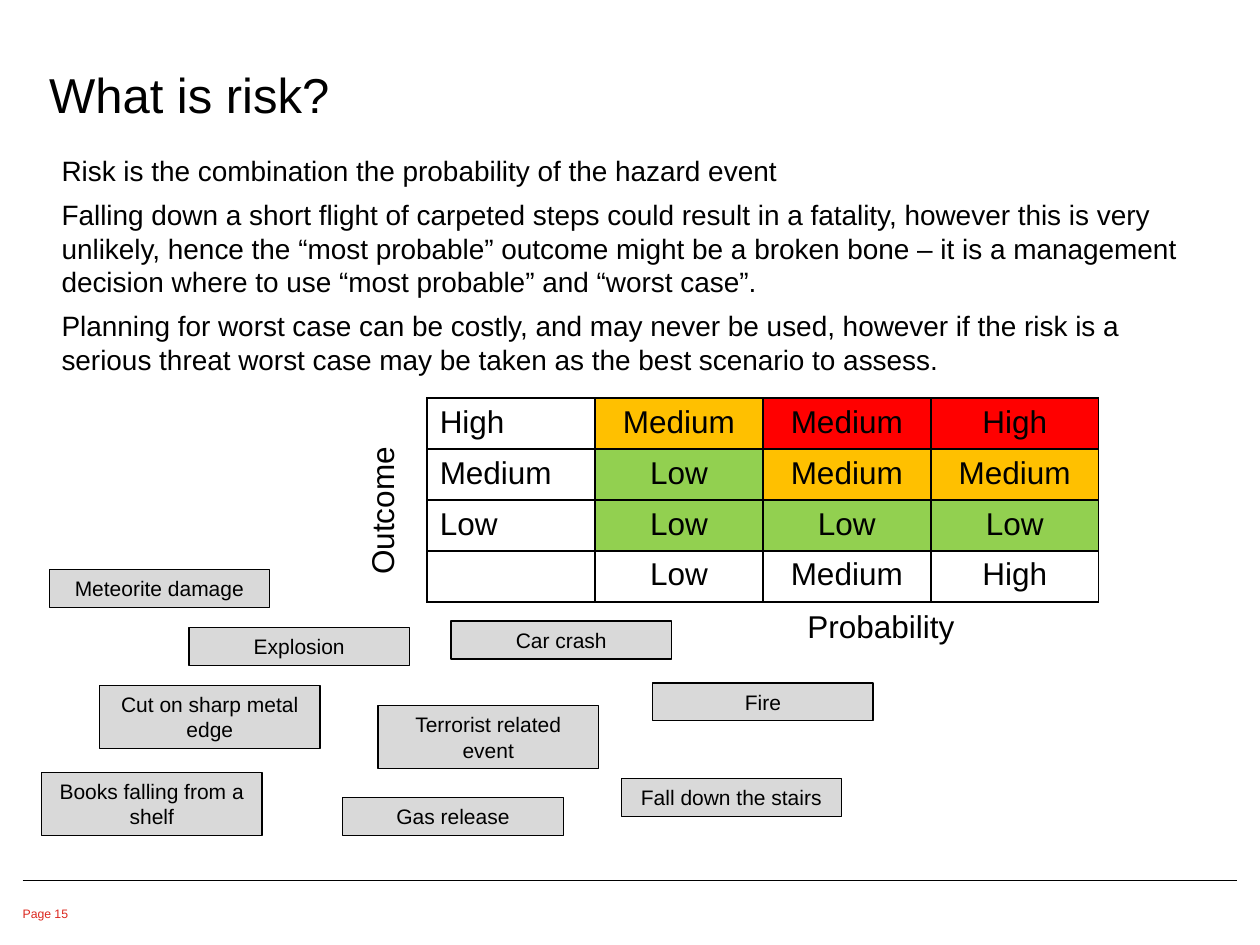
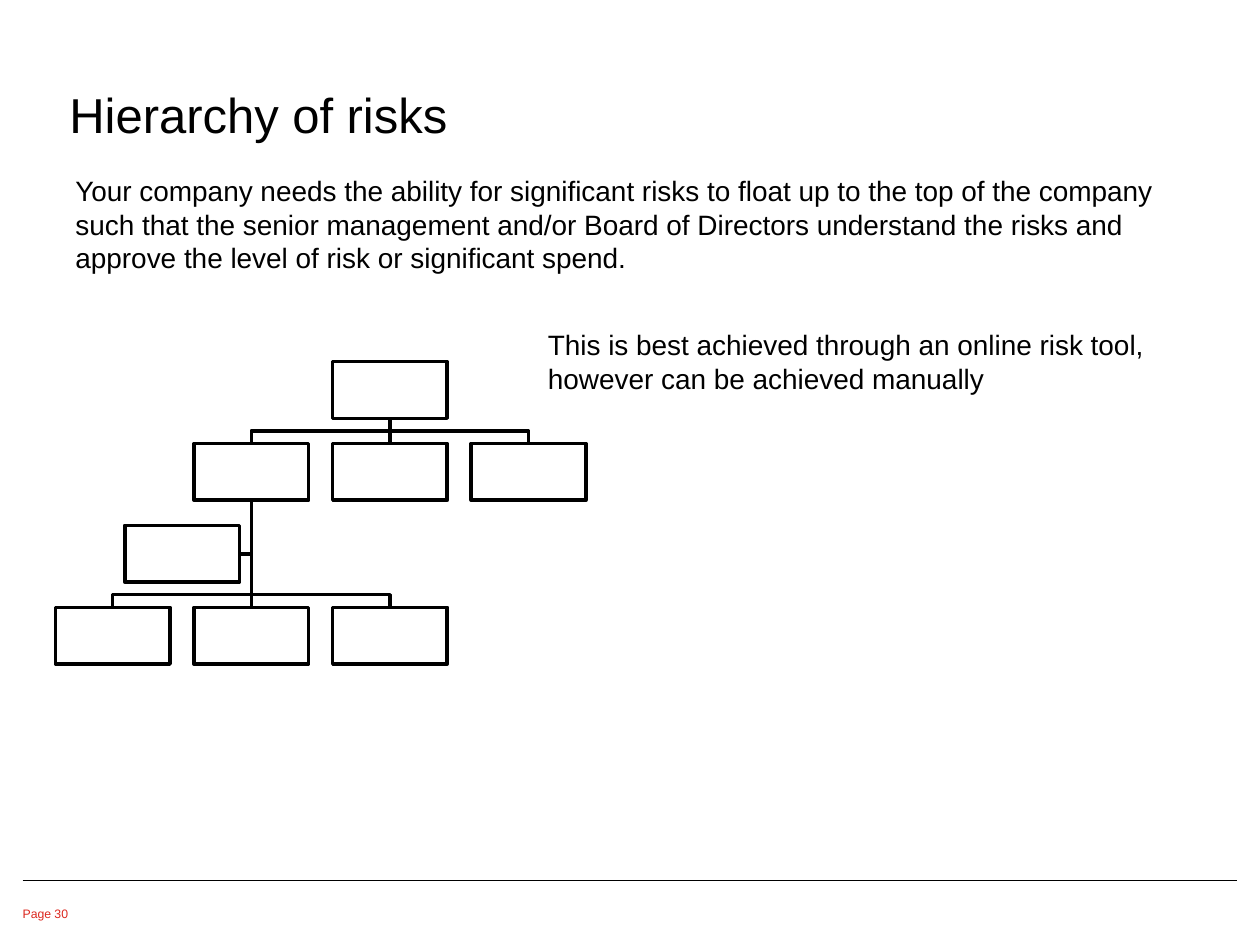
from dataclasses import dataclass
from typing import Optional

from lxml import etree
from pptx import Presentation
from pptx import util as u
from pptx.dml.color import RGBColor
from pptx.enum import shapes, text
from pptx.oxml import ns

Inches, Pt = u.Inches, u.Pt
FONT = "Arial"
COLORS = {
    "black": "000000", "white": "FFFFFF", "footer": "DC271E", "hazard": "D9D9D9",
    "low": "92D050", "medium": "FFC000", "high": "FF0000",
}


@dataclass
class Hazard:
    label: str
    left: float
    top: float
    lines: int = 1


@dataclass
class Node:
    column: float
    row: int
    parent: Optional[int] = None
    assistant: bool = False

    @property
    def left(self) -> float:
        return 0.44 + 1.1 * self.column

    @property
    def top(self) -> float:
        return 2.87 + 0.65 * self.row

    @property
    def center(self) -> float:
        return self.left + NODE_WIDTH / 2

    @property
    def bottom(self) -> float:
        return self.top + NODE_HEIGHT


NODE_WIDTH, NODE_HEIGHT = 0.91, 0.45

# Matrix rows: outcome label, then (rating, colour) by rising probability
MATRIX = [
    ("High", [("Medium", "medium"), ("Medium", "high"), ("High", "high")]),
    ("Medium", [("Low", "low"), ("Medium", "medium"), ("Medium", "medium")]),
    ("Low", [("Low", "low"), ("Low", "low"), ("Low", "low")]),
    ("", [("Low", "white"), ("Medium", "white"), ("High", "white")]),
]

HAZARDS = [
    Hazard("Meteorite damage", 0.39, 4.52),
    Hazard("Cut on sharp metal edge", 0.79, 5.44, 2),
    Hazard("Books falling from a shelf", 0.33, 6.13, 2),
    Hazard("Terrorist related event", 3, 5.6, 2),
    Hazard("Explosion", 1.5, 4.98),
    Hazard("Car crash", 3.58, 4.93),
    Hazard("Fire", 5.18, 5.42),
    Hazard("Gas release", 2.72, 6.33),
    Hazard("Fall down the stairs", 4.93, 6.18),
]

NODES = [
    Node(2, 0),
    Node(1, 1, 0), Node(2, 1, 0), Node(3, 1, 0),
    Node(0.5, 2, 1, assistant=True),
    Node(0, 3, 1), Node(1, 3, 1), Node(2, 3, 1),
]


def rgb(name: str) -> RGBColor:
    return RGBColor.from_string(COLORS[name])


def write(frame, lines, size, color="black", align=text.PP_ALIGN.LEFT, before=0) -> None:
    frame.word_wrap = True
    for index, line in enumerate(lines):
        para = frame.paragraphs[0] if index == 0 else frame.add_paragraph()
        para.alignment = align
        para.space_before = Pt(before)
        span = para.add_run()
        span.text = line
        span.font.size = Pt(size)
        span.font.name = FONT
        span.font.color.rgb = rgb(color)


def clear_margins(frame) -> None:
    frame.margin_left = frame.margin_right = frame.margin_top = frame.margin_bottom = 0


def add_text(page, left, top, width, height, lines, size, **style):
    box = page.shapes.add_textbox(Inches(left), Inches(top), Inches(width), Inches(height))
    write(box.text_frame, lines, size, **style)
    return box


def add_box(page, left, top, width, height, fill, weight):
    box = page.shapes.add_shape(shapes.MSO_SHAPE.RECTANGLE, Inches(left), Inches(top),
                                Inches(width), Inches(height))
    box.shadow.inherit = False
    box.fill.solid()
    box.fill.fore_color.rgb = rgb(fill)
    box.line.color.rgb = rgb("black")
    box.line.width = Pt(weight)
    return box


def add_route(page, points) -> None:
    corners = [(Inches(x), Inches(y)) for x, y in points]
    builder = page.shapes.build_freeform(*corners[0])
    builder.add_line_segments(corners[1:], close=False)
    route = builder.convert_to_shape()
    route.shadow.inherit = False
    route.fill.background()
    route.line.color.rgb = rgb("black")
    route.line.width = Pt(2)


def add_page(deck, title, left, top, number):
    page = deck.slides.add_slide(deck.slide_layouts[5])

    # Title
    heading = page.shapes.title
    heading.left, heading.top = Inches(left), Inches(top)
    heading.width, heading.height = Inches(9.36), Inches(1.06)
    frame = heading.text_frame
    clear_margins(frame)
    frame.auto_size = text.MSO_AUTO_SIZE.NONE
    frame.vertical_anchor = text.MSO_ANCHOR.BOTTOM
    write(frame, [title], 28)

    # Footer rule and page number
    rule = page.shapes.add_connector(shapes.MSO_CONNECTOR.STRAIGHT, Inches(0.18),
                                     Inches(6.99), Inches(9.82), Inches(6.99))
    rule.line.color.rgb = rgb("black")
    rule.line.width = Pt(0.75)
    etree.SubElement(rule._element.spPr, ns.qn("a:effectLst"))
    footer = add_text(page, 0.18, 7.19, 0.41, 0.15, [f"Page {number}"], 7, color="footer")
    clear_margins(footer.text_frame)
    footer.text_frame.word_wrap = False
    return page


def set_borders(cell) -> None:
    properties = cell._tc.get_or_add_tcPr()
    for index, side in enumerate(("lnL", "lnR", "lnT", "lnB")):
        border = etree.Element(ns.qn(f"a:{side}"), w=str(Pt(1)))
        fill = etree.SubElement(border, ns.qn("a:solidFill"))
        etree.SubElement(fill, ns.qn("a:srgbClr"), val=COLORS["black"])
        properties.insert(index, border)


def add_matrix(page) -> None:
    table = page.shapes.add_table(4, 4, Inches(3.39), Inches(3.16),
                                  Inches(5.33), Inches(1.62)).table
    for r, (outcome, ratings) in enumerate(MATRIX):
        for c, (label, color) in enumerate([(outcome, "white"), *ratings]):
            cell = table.cell(r, c)
            cell.fill.solid()
            cell.fill.fore_color.rgb = rgb(color)
            set_borders(cell)
            if label:
                align = text.PP_ALIGN.CENTER if c else text.PP_ALIGN.LEFT
                write(cell.text_frame, [label], 18, align=align)


def risk_page(deck) -> None:
    page = add_page(deck, "What is risk?", 0.39, -0.08, 15)
    add_text(page, 0.39, 1.17, 9.1, 1.88, [
        "Risk is the combination the probability of the hazard event",
        "Falling down a short flight of carpeted steps could result in a fatality, however "
        "this is very unlikely, hence the “most probable” outcome might be a broken bone – "
        "it is a management decision where to use “most probable” and “worst case”.",
        "Planning for worst case can be costly, and may never be used, however if the risk "
        "is a serious threat worst case may be taken as the best scenario to assess.",
    ], 16, before=6)

    # Risk matrix and axis names
    add_matrix(page)
    outcome = add_text(page, 2.83, 3.24, 0.5, 1.42, ["Outcome"], 18)
    outcome.text_frame._txBody.bodyPr.set("vert", "vert270")
    add_text(page, 6.31, 4.77, 3.17, 0.4, ["Probability"], 18)

    # Hazards to place in the matrix
    for hazard in HAZARDS:
        box = add_box(page, hazard.left, hazard.top, 1.75, 0.1 + 0.2 * hazard.lines,
                      "hazard", 0.75)
        write(box.text_frame, [hazard.label], 12, align=text.PP_ALIGN.CENTER)


def hierarchy_page(deck) -> None:
    page = add_page(deck, "Hierarchy of risks", 0.55, 0.08, 30)
    add_text(page, 0.5, 1.33, 8.92, 0.95, [
        "Your company needs the ability for significant risks to float up to the top of the "
        "company such that the senior management and/or Board of Directors understand the "
        "risks and approve the level of risk or significant spend.",
    ], 16, before=6)

    # Routes from each parent, then the boxes
    for node in NODES:
        if node.parent is None:
            continue
        parent = NODES[node.parent]
        start = (parent.center, parent.bottom)
        if node.assistant:
            middle = node.top + NODE_HEIGHT / 2
            points = [start, (parent.center, middle), (node.left + NODE_WIDTH, middle)]
        elif node.column == parent.column:
            points = [start, (node.center, node.top)]
        else:
            bus = node.top - 0.1
            points = [start, (parent.center, bus), (node.center, bus), (node.center, node.top)]
        add_route(page, points)
    for node in NODES:
        add_box(page, node.left, node.top, NODE_WIDTH, NODE_HEIGHT, "white", 2)

    add_text(page, 4.25, 2.55, 5, 0.64, [
        "This is best achieved through an online risk tool, however can be achieved manually",
    ], 16, before=6)


def main() -> None:
    deck = Presentation()
    deck.slide_width, deck.slide_height = Inches(10), Inches(7.5)
    risk_page(deck)
    hierarchy_page(deck)
    deck.save("out.pptx")


if __name__ == "__main__":
    main()
